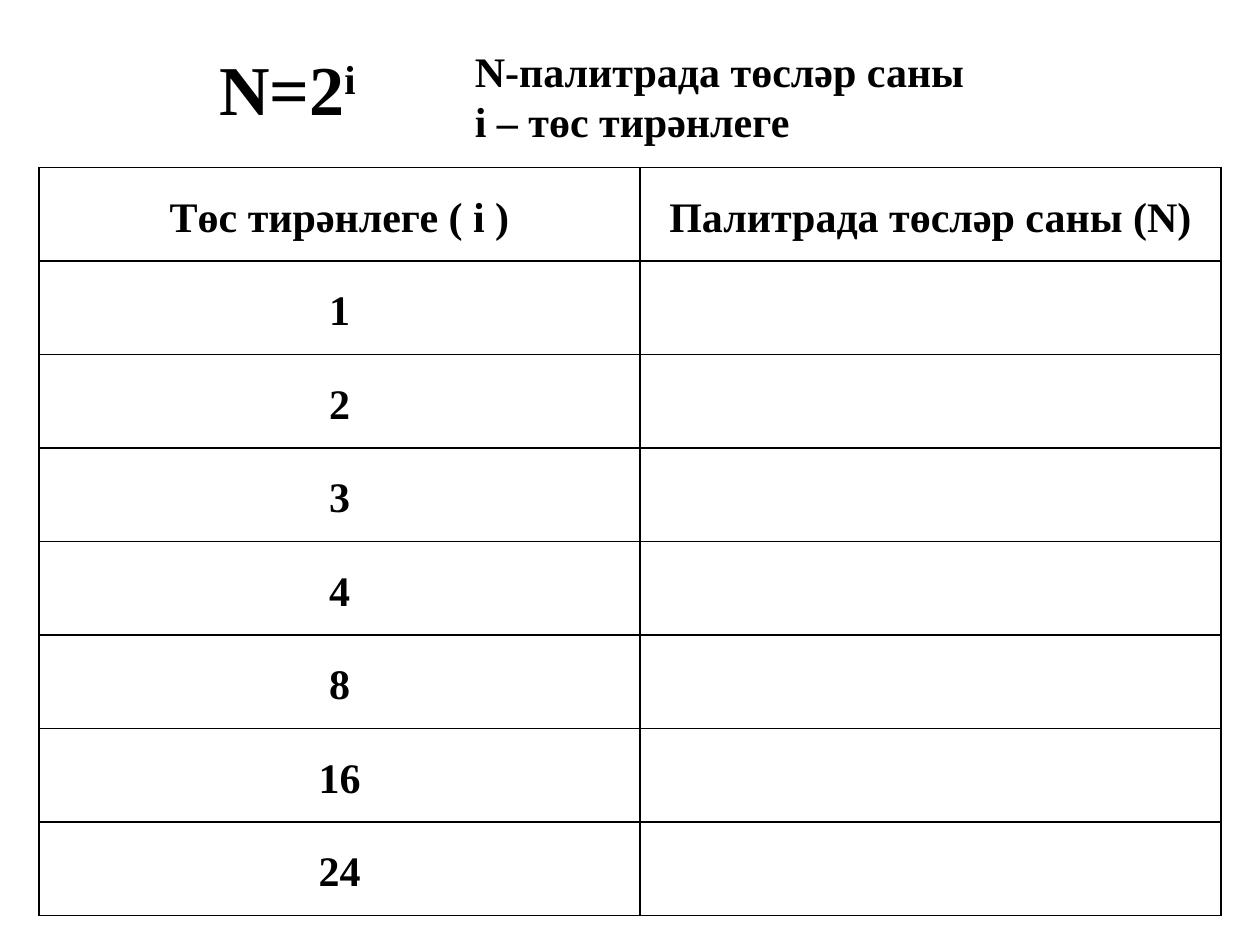
from lxml import etree
from pptx import Presentation
from pptx.dml.color import RGBColor
from pptx.enum.text import MSO_ANCHOR, MSO_AUTO_SIZE, PP_ALIGN
from pptx.oxml.ns import qn
from pptx.util import Inches, Pt

CENTER = PP_ALIGN.CENTER
MIDDLE = MSO_ANCHOR.MIDDLE
GROW = MSO_AUTO_SIZE.SHAPE_TO_FIT_TEXT
BLANK_LAYOUT = 6

COLUMN_WIDTHS = [4.77, 4.61]
TABLE_HEIGHT = 5.94
HEADERS = ["Төс тирәнлеге ( i )", "Палитрада төсләр саны (N)"]
DEPTHS = [1, 2, 3, 4, 8, 16, 24]


def color(value):
    return RGBColor.from_string(value)


def add_span(para, text, size=24, raised=False, font="Times New Roman", ink="000000"):
    """Append a bold run to the paragraph; raised makes it superscript."""
    span = para.add_run()
    span.text = text
    span.font.name = font
    span.font.size = Pt(size)
    span.font.bold = True
    span.font.color.rgb = color(ink)
    if raised:
        span.font._element.set("baseline", "30000")


def add_borders(cell, ink, width):
    """Draw all four cell edges, ahead of the fill as the schema requires."""
    properties = cell._tc.get_or_add_tcPr()
    for index, side in enumerate(("lnL", "lnR", "lnT", "lnB")):
        line = etree.Element(qn(f"a:{side}"), w=str(Pt(width)))
        fill = etree.SubElement(line, qn("a:solidFill"))
        etree.SubElement(fill, qn("a:srgbClr"), val=ink)
        properties.insert(index, line)


class Builder:
    def __init__(self, page, ink="000000", border=1):
        self.page = page
        self.ink = ink
        self.border = border

    def text(self, left, top, width, height, lines, size):
        """Add a text box; each line is a list of (text, raised) pairs."""
        box = self.page.shapes.add_textbox(
            Inches(left), Inches(top), Inches(width), Inches(height))
        frame = box.text_frame
        frame.word_wrap = True
        frame.auto_size = GROW
        for index, line in enumerate(lines):
            para = frame.add_paragraph() if index else frame.paragraphs[0]
            for text, raised in line:
                add_span(para, text, size=size, raised=raised, ink=self.ink)

    def table(self, left, top, widths, height, rows):
        table = self.page.shapes.add_table(
            len(rows), len(widths), Inches(left), Inches(top),
            Inches(sum(widths)), Inches(height)).table
        table.first_row = False
        table.horz_banding = False
        for column, width in zip(table.columns, widths):
            column.width = Inches(width)
        for row, texts in zip(table.rows, rows):
            for cell, text in zip(row.cells, texts):
                self.cell(cell, text)

    def cell(self, cell, text):
        cell.fill.background()
        add_borders(cell, self.ink, self.border)
        cell.vertical_anchor = MIDDLE
        cell.margin_left = cell.margin_right = Inches(0.07)
        cell.margin_top = cell.margin_bottom = 0
        para = cell.text_frame.paragraphs[0]
        para.alignment = CENTER
        para.line_spacing = 1.15
        if text:
            add_span(para, text, ink=self.ink)


def main():
    deck = Presentation()
    deck.slide_width = Inches(10)
    deck.slide_height = Inches(7.5)
    page = deck.slides.add_slide(deck.slide_layouts[BLANK_LAYOUT])
    builder = Builder(page)

    builder.text(1.64, 0.31, 1.72, 0.77, [[("N=2", False), ("i", True)]], size=40)
    legend = ["N-палитрада төсләр саны", "i – төс тирәнлеге"]
    builder.text(3.67, 0.31, 5.08, 0.91, [[(line, False)] for line in legend], size=24)

    rows = [HEADERS] + [[str(depth), ""] for depth in DEPTHS]
    builder.table(0.31, 1.33, COLUMN_WIDTHS, TABLE_HEIGHT, rows)
    deck.save("out.pptx")


if __name__ == "__main__":
    main()
